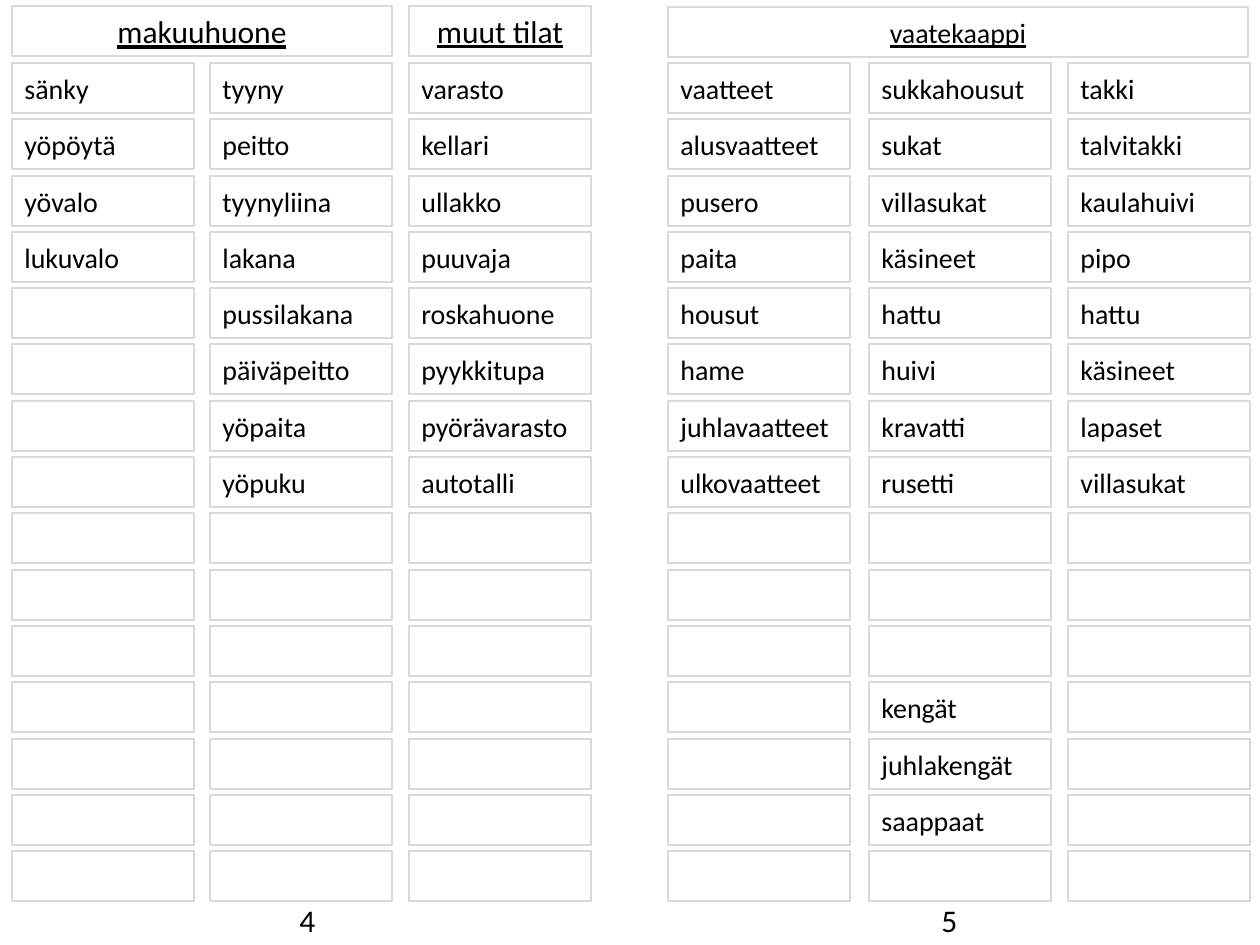
from dataclasses import dataclass

from pptx import Presentation
from pptx.dml.color import RGBColor
from pptx.enum.shapes import MSO_SHAPE
from pptx.enum.text import MSO_ANCHOR, MSO_AUTO_SIZE, PP_ALIGN
from pptx.util import Emu, Pt

RECT = MSO_SHAPE.RECTANGLE
MIDDLE, TOP = MSO_ANCHOR.MIDDLE, MSO_ANCHOR.TOP
LEFT, CENTER = PP_ALIGN.LEFT, PP_ALIGN.CENTER
FIXED, GROW = MSO_AUTO_SIZE.NONE, MSO_AUTO_SIZE.SHAPE_TO_FIT_TEXT
SCALE = 914400 / 126


def px(value):
    return Emu(round(value * SCALE))


@dataclass(frozen=True)
class Theme:
    face: str = "Calibri"
    ink: RGBColor = RGBColor(0, 0, 0)
    edge: RGBColor = RGBColor(217, 217, 217)
    word: int = 16
    head: int = 18


class Sheet:
    def __init__(self, slide, theme):
        self.slide = slide
        self.theme = theme

    def label(self, shape, text, size, align=LEFT, under=None):
        para = shape.text_frame.paragraphs[0]
        para.text = text
        para.alignment = align
        font = para.font
        font.name = self.theme.face
        font.size = Pt(size)
        font.color.rgb = self.theme.ink
        font.underline = under

    def frame(self, shape):
        shape.fill.background()
        shape.line.color.rgb = self.theme.edge
        shape.line.width = Pt(1)
        text = shape.text_frame
        text.word_wrap = True
        text.auto_size = FIXED
        text.vertical_anchor = MIDDLE

    def box(self, x, y, wide, high):
        shape = self.slide.shapes.add_shape(RECT, px(x), px(y), px(wide), px(high))
        shape.shadow.inherit = False
        self.frame(shape)
        return shape

    def title(self, text, x, y, wide, high):
        shape = self.slide.shapes.title
        shape.left, shape.top = px(x), px(y)
        shape.width, shape.height = px(wide), px(high)
        self.frame(shape)
        self.label(shape, text, self.theme.head, CENTER, True)

    def head(self, text, size, x, y, wide, high):
        self.label(self.box(x, y, wide, high), text, size, CENTER, True)

    def word(self, text, x, y, wide, high):
        shape = self.box(x, y, wide, high)
        if text:
            self.label(shape, text, self.theme.word)

    def page(self, text, x, y, wide, high):
        shape = self.slide.shapes.add_textbox(px(x), px(y), px(wide), px(high))
        shape.text_frame.word_wrap = True
        shape.text_frame.auto_size = GROW
        shape.text_frame.vertical_anchor = TOP
        self.label(shape, text, self.theme.head)


ROWS, STEP, FIRST = 15, 56.3, 63
WIDE, HIGH = 182, 50

COLUMNS = {
    12: ["sänky", "yöpöytä", "yövalo", "lukuvalo"],
    210: ["tyyny", "peitto", "tyynyliina", "lakana", "pussilakana",
          "päiväpeitto", "yöpaita", "yöpuku"],
    409: ["varasto", "kellari", "ullakko", "puuvaja", "roskahuone",
          "pyykkitupa", "pyörävarasto", "autotalli"],
    668: ["vaatteet", "alusvaatteet", "pusero", "paita", "housut", "hame",
          "juhlavaatteet", "ulkovaatteet"],
    869: ["sukkahousut", "sukat", "villasukat", "käsineet", "hattu", "huivi",
          "kravatti", "rusetti", "", "", "", "kengät", "juhlakengät",
          "saappaat"],
    1068: ["takki", "talvitakki", "kaulahuivi", "pipo", "hattu", "käsineet",
           "lapaset", "villasukat"],
}


def main():
    deck = Presentation()
    deck.slide_width, deck.slide_height = px(1260), px(945)
    theme = Theme()
    sheet = Sheet(deck.slides.add_slide(deck.slide_layouts[5]), theme)

    sheet.title("makuuhuone", 12, 6, 380, HIGH)
    sheet.head("muut tilat", theme.head, 409, 6, WIDE, HIGH)
    sheet.head("vaatekaappi", theme.word, 668, 7, 580, HIGH)

    for x, words in COLUMNS.items():
        for row in range(ROWS):
            text = words[row] if row < len(words) else ""
            sheet.word(text, x, round(FIRST + row * STEP), WIDE, HIGH)

    sheet.page("4", 287, 895, 36, HIGH)
    sheet.page("5", 929, 895, 45, HIGH)
    deck.save("out.pptx")


if __name__ == "__main__":
    main()
